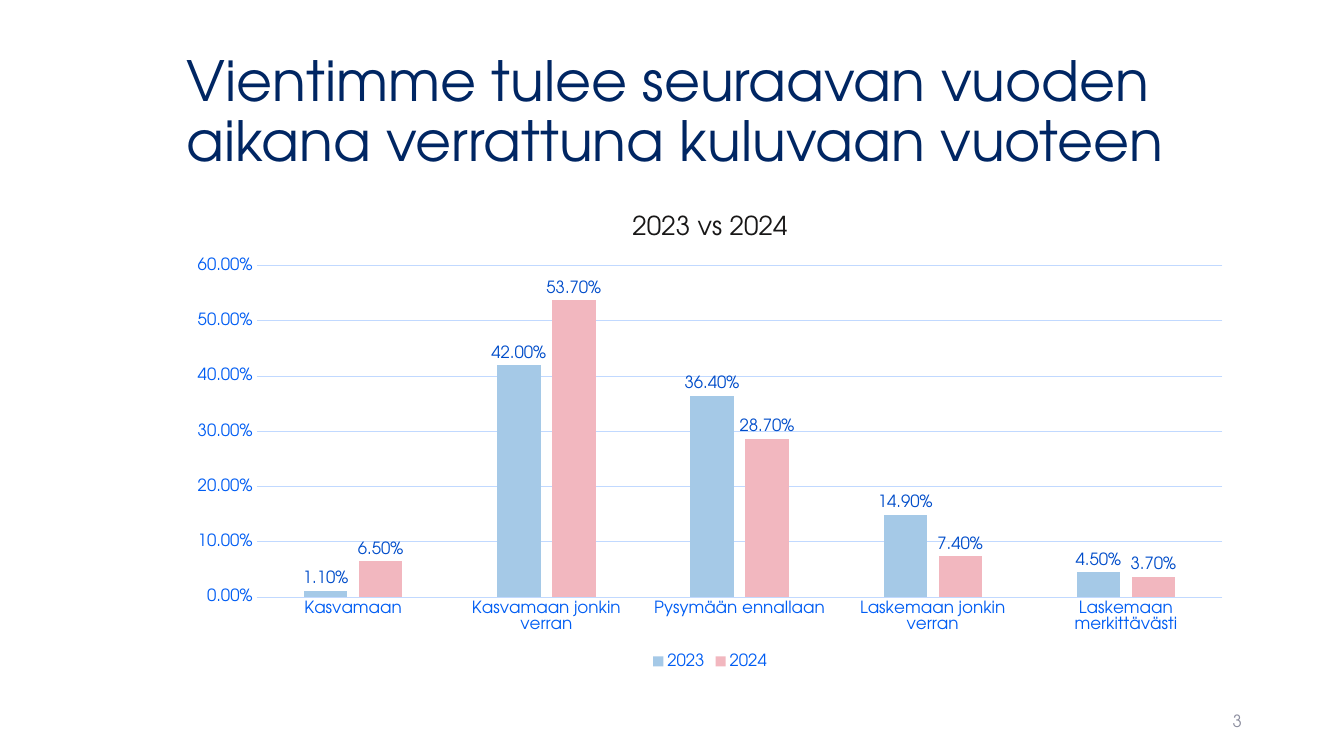
from lxml import etree
from pptx import Presentation
from pptx.chart.data import CategoryChartData
from pptx.dml.color import RGBColor
from pptx.enum.chart import (XL_CHART_TYPE, XL_LABEL_POSITION,
                             XL_LEGEND_POSITION, XL_TICK_MARK)
from pptx.enum.text import MSO_ANCHOR, MSO_AUTO_SIZE, PP_ALIGN
from pptx.util import Pt

COLUMN = XL_CHART_TYPE.COLUMN_CLUSTERED
OUTSIDE = XL_LABEL_POSITION.OUTSIDE_END
BOTTOM = XL_LEGEND_POSITION.BOTTOM
NO_TICK = XL_TICK_MARK.NONE
MIDDLE = MSO_ANCHOR.MIDDLE
NO_FIT = MSO_AUTO_SIZE.NONE
LEFT, RIGHT = PP_ALIGN.LEFT, PP_ALIGN.RIGHT

FACE = "TeX Gyre Adventor"
PERCENT = "0.00%"
NAVY = RGBColor(0x00, 0x26, 0x63)
BLUE = RGBColor(0x00, 0x5D, 0xF3)
DEEP = RGBColor(0x00, 0x4D, 0xCA)
PALE = RGBColor(0xC1, 0xD9, 0xFF)
SKY = RGBColor(0xA5, 0xC9, 0xE7)
PINK = RGBColor(0xF2, 0xB7, 0xBF)
BLACK = RGBColor(0x18, 0x17, 0x17)
GREY = RGBColor(0x8C, 0x8E, 0x9F)

GROUPS = ["Kasvamaan", "Kasvamaan jonkin verran", "Pysymään ennallaan",
          "Laskemaan jonkin verran", "Laskemaan merkittävästi"]
YEARS = [("2023", SKY, (0.011, 0.42, 0.364, 0.149, 0.045)),
         ("2024", PINK, (0.065, 0.537, 0.287, 0.074, 0.037))]


def style(font, size, color):
    font.name = FACE
    font.size = Pt(size)
    font.bold = False
    font.color.rgb = color


def fill_text(shape, text, size, color, align):
    frame = shape.text_frame
    frame.text = text
    frame.word_wrap = True
    frame.auto_size = NO_FIT
    frame.vertical_anchor = MIDDLE
    para = frame.paragraphs[0]
    para.alignment = align
    style(para.font, size, color)
    return para


def add_title(slide, text):
    title = slide.shapes.title
    title.left, title.top = Pt(126), Pt(28.8)
    title.width, title.height = Pt(762.5), Pt(104.4)
    para = fill_text(title, text, 39.6, NAVY, LEFT)
    para.line_spacing = 0.9


def style_axis(axis):
    axis.major_tick_mark = axis.minor_tick_mark = NO_TICK
    style(axis.tick_labels.font, 12, BLUE)


def style_line(line):
    line.color.rgb = PALE
    line.width = Pt(0.75)


def add_bars(slide):
    data = CategoryChartData(number_format=PERCENT)
    data.categories = GROUPS
    for name, _, values in YEARS:
        data.add_series(name, values)
    chart = slide.shapes.add_chart(
        COLUMN, Pt(126), Pt(138.2), Pt(762.5), Pt(342.7), data).chart
    style(chart.font, 10, NAVY)

    # Heading and legend
    chart.has_title = True
    frame = chart.chart_title.text_frame
    frame.text = "2023 vs 2024"
    style(frame.paragraphs[0].font, 18.6, BLACK)
    chart.chart_title.include_in_layout = False
    chart.has_legend = True
    chart.legend.position = BOTTOM
    chart.legend.include_in_layout = False
    style(chart.legend.font, 12, BLUE)

    # Axes
    style_axis(chart.category_axis)
    style_line(chart.category_axis.format.line)
    scale = chart.value_axis
    style_axis(scale)
    scale.minimum_scale, scale.maximum_scale = 0, 0.6
    scale.major_unit = 0.1
    scale.format.line.fill.background()
    style_line(scale.major_gridlines.format.line)
    scale.tick_labels.number_format = PERCENT
    scale.tick_labels.number_format_is_linked = False

    # Columns
    plot = chart.plots[0]
    plot.gap_width, plot.overlap = 219, -27
    plot.vary_by_categories = False
    for bars, (_, color, _) in zip(plot.series, YEARS):
        bars.format.fill.solid()
        bars.format.fill.fore_color.rgb = color
        labels = bars.data_labels
        labels.show_value = True
        labels.position = OUTSIDE
        labels.number_format = PERCENT
        labels.number_format_is_linked = False
        style(labels.font, 12, DEEP)


def add_number(slide, text):
    box = slide.shapes.add_textbox(Pt(678.2), Pt(500.4), Pt(216), Pt(28.8))
    fill_text(box, text, 12, GREY, RIGHT)


def main():
    deck = Presentation()
    deck.slide_width, deck.slide_height = Pt(960), Pt(540)
    slide = deck.slides.add_slide(deck.slide_layouts[5])
    add_title(slide, "Vientimme tulee seuraavan vuoden aikana "
                     "verrattuna kuluvaan vuoteen")
    add_bars(slide)
    add_number(slide, "3")
    deck.save("out.pptx")


if __name__ == "__main__":
    main()
